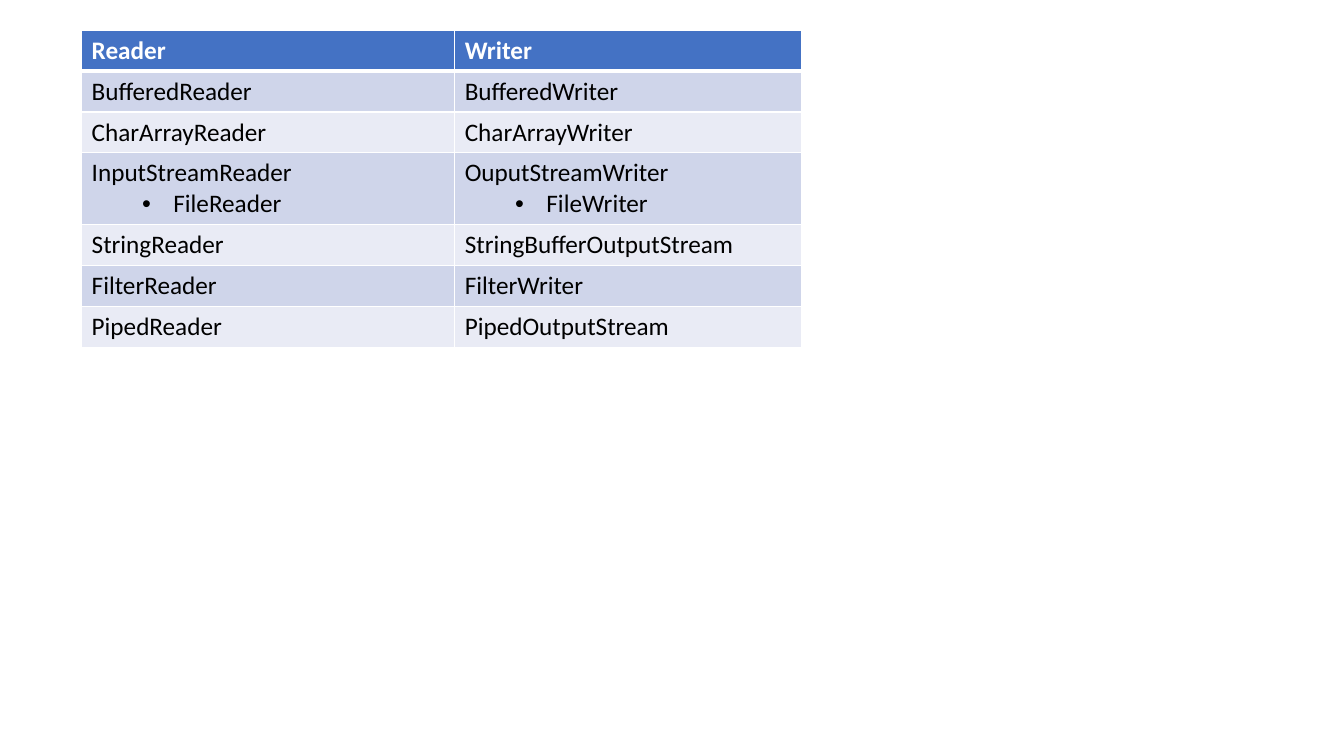
from lxml.etree import SubElement
from pptx import Presentation
from pptx.dml.color import RGBColor
from pptx.oxml import parse_xml
from pptx.oxml.ns import nsdecls, qn
from pptx.util import Inches, Pt

HEADER_FILL = "4472C4"
BAND_FILLS = ("CFD5EA", "E9EBF5")
WHITE, BLACK = "FFFFFF", "000000"

# Each cell is a list of lines; lines after the first are bulleted
CLASS_ROWS = [
    (["Reader"], ["Writer"]),
    (["BufferedReader"], ["BufferedWriter"]),
    (["CharArrayReader"], ["CharArrayWriter"]),
    (["InputStreamReader", "FileReader"], ["OuputStreamWriter", "FileWriter"]),
    (["StringReader"], ["StringBufferOutputStream"]),
    (["FilterReader"], ["FilterWriter"]),
    (["PipedReader"], ["PipedOutputStream"]),
]


def color(hex_value):
    return RGBColor.from_string(hex_value)


class SlideBuilder:
    font_name = "Calibri"
    font_size = Pt(18)

    def __init__(self, presentation):
        self.slide = presentation.slides.add_slide(presentation.slide_layouts[6])

    def add_table(self, rows, left, top, column_widths, line_height, extra_line):
        heights = [line_height + extra_line * (len(row[0]) - 1) for row in rows]
        shape = self.slide.shapes.add_table(
            len(rows), len(column_widths), Inches(left), Inches(top),
            Inches(sum(column_widths)), Inches(sum(heights)))
        table = shape.table
        for column, width in zip(table.columns, column_widths):
            column.width = Inches(width)
        for row_index, row in enumerate(rows):
            table.rows[row_index].height = Inches(heights[row_index])
            for column_index, lines in enumerate(row):
                self.fill_cell(table.cell(row_index, column_index), lines, row_index)

    def fill_cell(self, cell, lines, row_index):
        is_header = row_index == 0
        cell.fill.solid()
        cell.fill.fore_color.rgb = color(
            HEADER_FILL if is_header else BAND_FILLS[(row_index - 1) % 2])
        self.set_borders(cell, top=3 if row_index == 1 else 1, bottom=3 if is_header else 1)
        cell.text_frame.text = "\n".join(lines)
        for index, paragraph in enumerate(cell.text_frame.paragraphs):
            if index:
                self.add_bullet(paragraph)
            font = paragraph.font
            font.name, font.size, font.bold = self.font_name, self.font_size, is_header
            font.color.rgb = color(WHITE if is_header else BLACK)

    def set_borders(self, cell, top, bottom):
        properties = cell._tc.get_or_add_tcPr()
        widths = {"lnL": 1, "lnR": 1, "lnT": top, "lnB": bottom}
        for position, (tag, width) in enumerate(widths.items()):
            properties.insert(position, parse_xml(
                f'<a:{tag} {nsdecls("a")} w="{Pt(width)}"><a:solidFill>'
                f'<a:srgbClr val="{WHITE}"/></a:solidFill></a:{tag}>'))

    def add_bullet(self, paragraph):
        paragraph.level = 1
        properties = paragraph._p.get_or_add_pPr()
        properties.set("marL", str(Inches(0.81)))
        properties.set("indent", str(Inches(-0.31)))
        SubElement(properties, qn("a:buFont")).set("typeface", "Arial")
        SubElement(properties, qn("a:buChar")).set("char", "•")


def main():
    presentation = Presentation()
    presentation.slide_width = Inches(13.33)
    presentation.slide_height = Inches(7.5)

    # Reader and writer class pairs
    builder = SlideBuilder(presentation)
    builder.add_table(CLASS_ROWS, left=0.81, top=0.3, column_widths=(3.7, 3.44),
                      line_height=0.4, extra_line=0.3)

    presentation.save("out.pptx")


if __name__ == "__main__":
    main()
